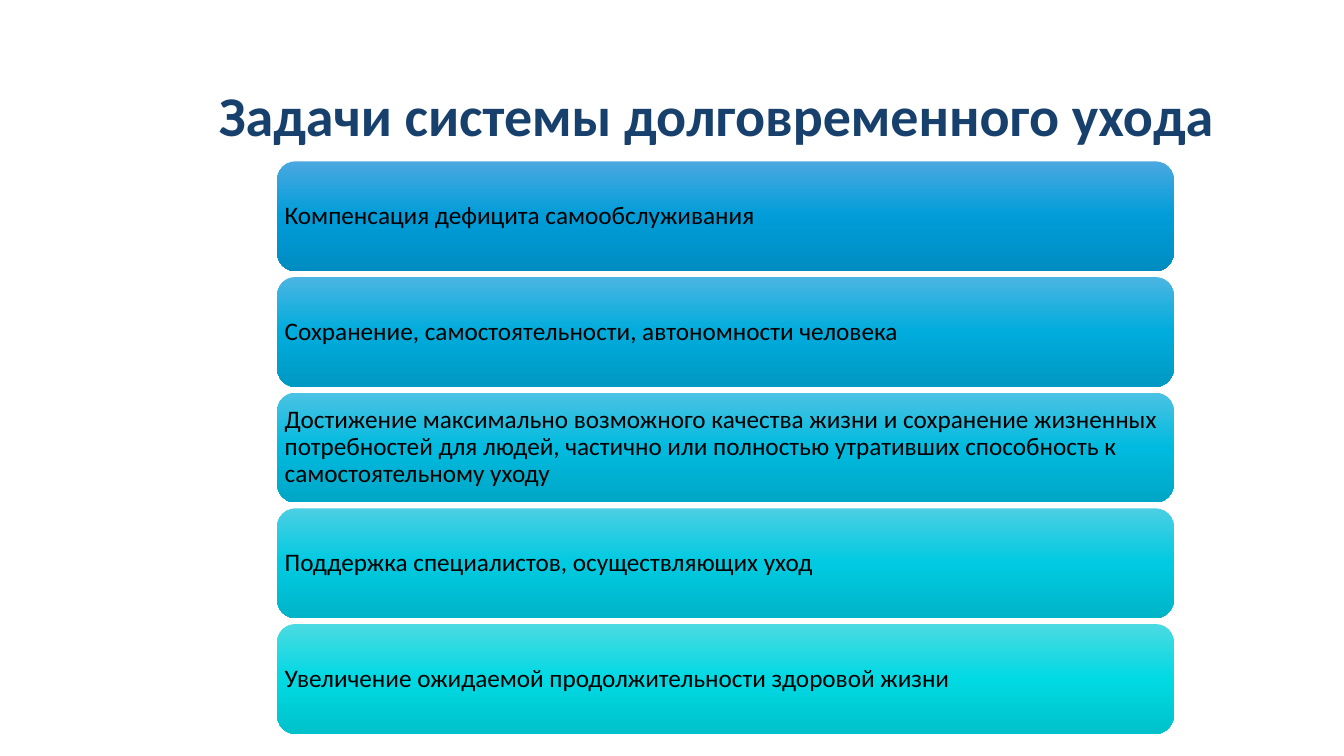
from copy import deepcopy

from pptx import Presentation
from pptx.dml.color import RGBColor
from pptx.enum.shapes import MSO_SHAPE as Shape
from pptx.enum.text import MSO_ANCHOR as Anchor, MSO_AUTO_SIZE as AutoSize, PP_ALIGN as Align
from pptx.oxml.ns import qn
from pptx.util import Inches, Pt

SLIDE_WIDTH, SLIDE_HEIGHT = 13.33, 7.5
CARD_LEFT, CARD_TOP = 2.75, 1.6
CARD_WIDTH, CARD_HEIGHT = 8.89, 1.09
CARD_PITCH = 1.1475
COLORS = {"title": "17406D", "text": "000000"}
GOALS = [
    ("Компенсация дефицита самообслуживания", ("4BA8E0", "009DD9", "008CC1")),
    ("Сохранение, самостоятельности, автономности человека", ("4BB5E2", "00ACDC", "0099C3")),
    ("Достижение максимально возможного качества жизни и сохранение жизненных "
     "потребностей для людей, частично или полностью утративших способность к "
     "самостоятельному уходу", ("4BC2E3", "00BBDF", "00A6C6")),
    ("Поддержка специалистов, осуществляющих уход", ("4BCEE3", "00CAE1", "00B4C8")),
    ("Увеличение ожидаемой продолжительности здоровой жизни", ("4BDAE2", "01D9E3", "00C2CB")),
]


def write_text(holder, text, size=18, color="text", bold=False, inset=(0.1, 0.05)):
    """Put one left-aligned, vertically centred paragraph into a shape."""
    frame = holder.text_frame
    frame.word_wrap = True
    frame.auto_size = AutoSize.NONE
    frame.vertical_anchor = Anchor.MIDDLE
    frame.margin_left = frame.margin_right = Inches(inset[0])
    frame.margin_top = frame.margin_bottom = Inches(inset[1])
    paragraph = frame.paragraphs[0]
    paragraph.alignment = Align.LEFT
    paragraph.line_spacing = 0.9
    run = paragraph.add_run()
    run.text = text
    run.font.name = "Calibri"
    run.font.size = Pt(size)
    run.font.bold = bold
    run.font.color.rgb = RGBColor.from_string(COLORS[color])


def fill_downward(card, shades):
    """Fill a card with evenly spaced shades from top to bottom."""
    card.fill.gradient()
    card.fill.gradient_angle = 270
    stop_list = card.element.spPr.find(qn("a:gradFill")).find(qn("a:gsLst"))
    stop_list.append(deepcopy(stop_list[0]))
    for index, (stop, shade) in enumerate(zip(card.fill.gradient_stops, shades)):
        stop.position = index / (len(shades) - 1)
        stop.color.rgb = RGBColor.from_string(shade)


def add_goal(slide, row, goal, shades):
    """Add the rounded card of one goal in its row."""
    card = slide.shapes.add_shape(
        Shape.ROUNDED_RECTANGLE, Inches(CARD_LEFT), Inches(CARD_TOP + row * CARD_PITCH),
        Inches(CARD_WIDTH), Inches(CARD_HEIGHT))
    card.shadow.inherit = False
    card.line.fill.background()
    fill_downward(card, shades)
    write_text(card, goal, inset=(0.02, 0.02))


def add_title(slide, text):
    """Place and format the title placeholder."""
    title = slide.shapes.title
    title.left, title.top = Inches(2.07), Inches(0.45)
    title.width, title.height = Inches(10.91), Inches(1.45)
    write_text(title, text, size=40, color="title", bold=True)


def main():
    """Build the slide and save it."""
    deck = Presentation()
    deck.slide_width, deck.slide_height = Inches(SLIDE_WIDTH), Inches(SLIDE_HEIGHT)
    slide = deck.slides.add_slide(deck.slide_layouts[5])
    add_title(slide, "Задачи системы долговременного ухода")
    for row, (goal, shades) in enumerate(GOALS):
        add_goal(slide, row, goal, shades)
    deck.save("out.pptx")


if __name__ == "__main__":
    main()
